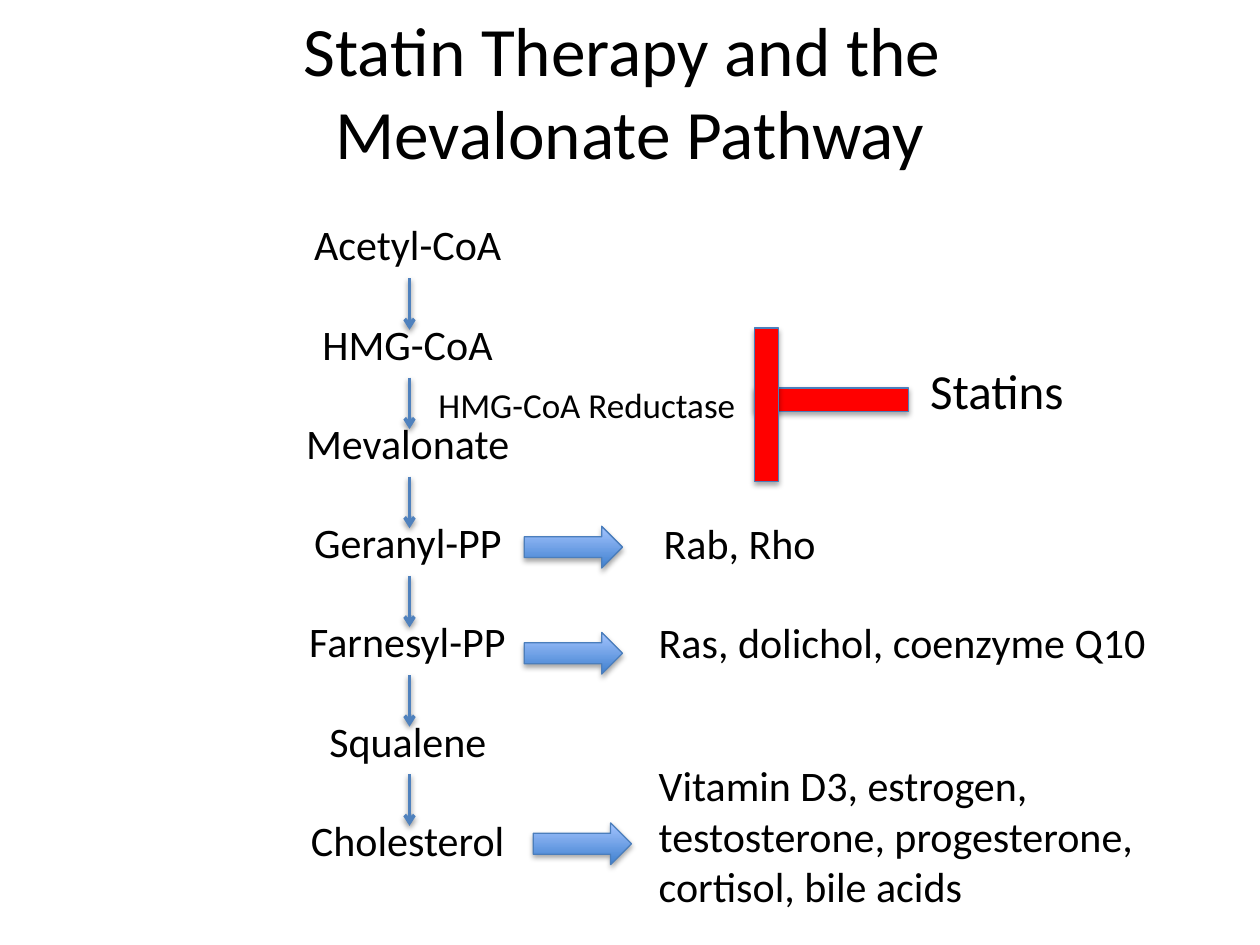
from lxml import etree
from pptx import Presentation
from pptx import util as u
from pptx.dml.color import RGBColor
from pptx.enum import shapes, text
from pptx.oxml.ns import qn

FONT = "Calibri"
BLACK, RED, OUTLINE, LINE = "000000", "FF0000", "4B7EBC", "4F81BD"
ARROW_DARK, ARROW_LIGHT = "3F80CE", "A4C4FF"
STEP = 2.0  # vertical distance between pathway stages, cm

# Stage name and label width, cm
STAGES = [("Acetyl-CoA", 4.32), ("HMG-CoA", 3.99), ("Mevalonate", 4.65),
          ("Geranyl-PP", 4.32), ("Farnesyl-PP", 4.52), ("Squalene", 3.71),
          ("Cholesterol", 4.45)]

# Arrow left and top, product left, top, width and height, wrapping, wording
PRODUCTS = [
    (0, 0.3, 2.56, 0, 3.61, 1.27, False, "Rab, Rho"),
    (0, 2.44, 2.46, 2.0, 10.41, 1.27, False, "Ras, dolichol, coenzyme Q10"),
    (0.18, 6.28, 2.46, 4.88, 10.67, 3.33, True,
     "Vitamin D3, estrogen, testosterone, progesterone, cortisol, bile acids"),
]


def color(hex_code):
    return RGBColor.from_string(hex_code)


def add_shadow(shape, opacity, distance):
    """Soft shadow falling straight down; opacity in percent, distance in points."""
    properties = shape._element.spPr
    for old in properties.findall(qn("a:effectLst")):
        properties.remove(old)
    effects = etree.SubElement(properties, qn("a:effectLst"))
    shadow = etree.SubElement(
        effects, qn("a:outerShdw"), blurRad=str(u.Pt(3.1)), dist=str(u.Pt(distance)),
        dir="5400000", rotWithShape="0")
    black = etree.SubElement(shadow, qn("a:srgbClr"), val=BLACK)
    etree.SubElement(black, qn("a:alpha"), val=str(opacity * 1000))


def add_label(slide, left, top, width, height, lines, size, wrap=True, centered=False):
    label = slide.shapes.add_textbox(u.Cm(left), u.Cm(top), u.Cm(width), u.Cm(height))
    frame = label.text_frame
    frame.word_wrap = wrap
    paragraph = frame.paragraphs[0]
    if centered:
        frame.vertical_anchor = text.MSO_ANCHOR.MIDDLE
        paragraph.alignment = text.PP_ALIGN.CENTER
    else:
        frame.auto_size = text.MSO_AUTO_SIZE.SHAPE_TO_FIT_TEXT
    for number, line in enumerate(lines):
        if number:
            paragraph.add_line_break()
        run = paragraph.add_run()
        run.text = line
        run.font.name = FONT
        run.font.size = u.Pt(size)
        run.font.color.rgb = color(BLACK)


def add_block(parent, kind, left, top, width, height):
    """Outlined, shadowed shape; the caller sets its fill."""
    block = parent.shapes.add_shape(kind, u.Cm(left), u.Cm(top), u.Cm(width), u.Cm(height))
    block.line.color.rgb = color(OUTLINE)
    block.line.width = u.Pt(0.75)
    add_shadow(block, 35, 1.8)
    return block


def add_step_arrow(slide, x, top, length):
    arrow = slide.shapes.add_connector(
        shapes.MSO_CONNECTOR.STRAIGHT, u.Cm(x), u.Cm(top), u.Cm(x), u.Cm(top + length))
    arrow.line.color.rgb = color(LINE)
    arrow.line.width = u.Pt(2)
    etree.SubElement(arrow.line._get_or_add_ln(), qn("a:tailEnd"), type="arrow")
    add_shadow(arrow, 38, 1.6)


def add_product_arrow(slide, left, top):
    arrow = add_block(slide, shapes.MSO_SHAPE.RIGHT_ARROW, left, top, 1.98, 0.84)
    arrow.fill.gradient()
    arrow.fill.gradient_angle = 90
    for stop, shade in zip(arrow.fill.gradient_stops, (ARROW_DARK, ARROW_LIGHT)):
        stop.color.rgb = color(shade)


def add_title(slide, left, top, width, height):
    add_label(slide, left, top, width, height,
              ["Statin Therapy and the ", "Mevalonate Pathway"], 39.6, centered=True)


def add_pathway(slide, left, top, width):
    """Column of stages joined by downward arrows."""
    center = left + width / 2
    for row, (stage, label_width) in enumerate(STAGES):
        y = top + row * STEP
        add_label(slide, center - label_width / 2, y, label_width, 1.27,
                  [stage], 24, wrap=False)
        if row < len(STAGES) - 1:
            add_step_arrow(slide, center + 0.01, y + 1.32, 1.04)


def add_inhibition(slide, left, top):
    """Enzyme, red blocking bar and drug class."""
    add_label(slide, left, top + 0.46, 6.63, 1.12, ["HMG-CoA Reductase"], 20)
    add_label(slide, left + 9.91, top, 3.81, 1.45, ["Statins"], 28)
    bar = slide.shapes.add_group_shape()
    for x, y, rotation in ((6.63, 0.68, 0), (5.31, 0.78, 270)):
        part = add_block(bar, shapes.MSO_SHAPE.RECTANGLE, left + x, top + y, 3.1, 0.48)
        part.fill.solid()
        part.fill.fore_color.rgb = color(RED)
        part.rotation = rotation


def add_products(slide, left, top):
    """Side products of the lower stages, each with its arrow."""
    for arrow_x, arrow_y, x, y, width, height, wrap, wording in PRODUCTS:
        add_label(slide, left + x, top + y, width, height, [wording], 24, wrap)
        add_product_arrow(slide, left + arrow_x, top + arrow_y)


def main():
    deck = Presentation()
    deck.slide_width, deck.slide_height = u.Cm(25.4), u.Cm(19.05)
    slide = deck.slides.add_slide(deck.slide_layouts[6])
    add_title(slide, 1.27, 0.23, 22.86, 3.18)
    add_pathway(slide, 5.92, 4.29, 4.65)
    add_inhibition(slide, 8.59, 7.14)
    add_products(slide, 10.57, 10.31)
    deck.save("out.pptx")


if __name__ == "__main__":
    main()
